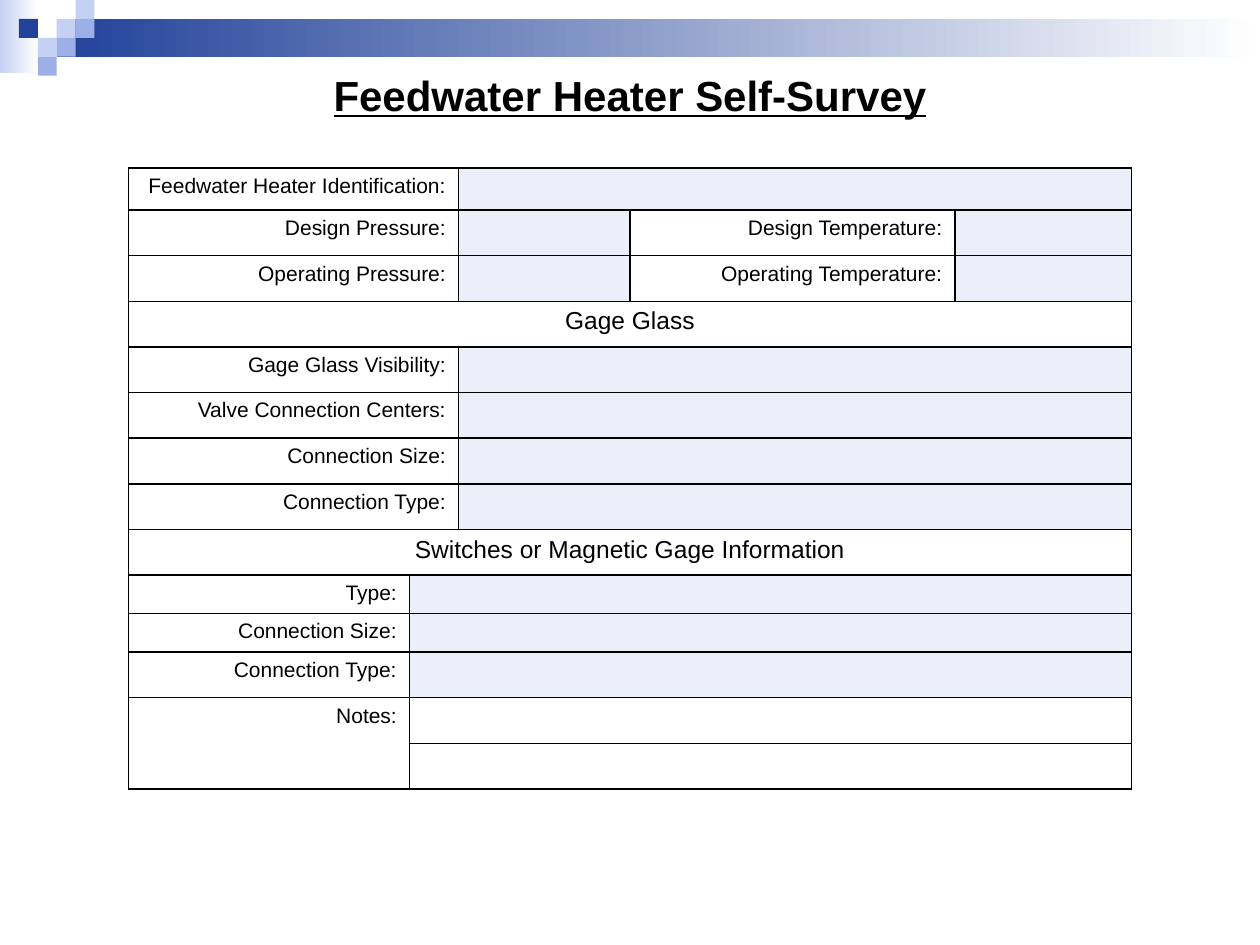
import pptx
import pptx.dml.color
import pptx.enum.shapes
import pptx.enum.text
import pptx.oxml.ns
import pptx.util
from lxml import etree

Pt = pptx.util.Pt
ALIGN = pptx.enum.text.PP_ALIGN
BLACK, WHITE, FIELD = "000000", "FFFFFF", "EBEFFA"
NAVY, BLUE, PALE = "224299", "9CB0E7", "C4D1F2"


def color(hex_string):
    return pptx.dml.color.RGBColor.from_string(hex_string)


def add_rectangle(left, top, width, height, start, end=None):
    shape = slide.shapes.add_shape(
        pptx.enum.shapes.MSO_SHAPE.RECTANGLE, Pt(left), Pt(top), Pt(width), Pt(height))
    shape.shadow.inherit = False
    shape.line.fill.background()
    if end is None:
        shape.fill.solid()
        shape.fill.fore_color.rgb = color(start)
    else:
        shape.fill.gradient()
        shape.fill.gradient_angle = 0
        for stop, hex_string in zip(shape.fill.gradient_stops, (start, end)):
            stop.color.rgb = color(hex_string)


presentation = pptx.Presentation()
presentation.slide_width = Pt(720)
presentation.slide_height = Pt(540)
slide = presentation.slides.add_slide(presentation.slide_layouts[5])

# Header band and its mosaic of squares (column, row, colour)
add_rectangle(0, 0, 22, 41.8, PALE, WHITE)
add_rectangle(32.4, 10.8, 687.6, 21.6, NAVY, WHITE)
SQUARE = 10.8
for column, row, hex_string in [(3, 1, PALE), (4, 0, PALE), (4, 1, BLUE), (2, 2, PALE),
                                (1, 1, NAVY), (3, 2, BLUE), (2, 3, BLUE)]:
    add_rectangle(column * SQUARE, row * SQUARE, SQUARE, SQUARE, hex_string)

# Title
title = slide.shapes.title
title.left, title.top, title.width, title.height = Pt(181.4), Pt(36), Pt(357.2), Pt(36)
title.text_frame.vertical_anchor = pptx.enum.text.MSO_ANCHOR.TOP
paragraph = title.text_frame.paragraphs[0]
paragraph.alignment = ALIGN.CENTER
run = paragraph.add_run()
run.text = "Feedwater Heater Self-Survey"
run.font.name, run.font.size = "Arial", Pt(24)
run.font.bold = run.font.underline = True
run.font.color.rgb = color(BLACK)

# Survey rows: each entry is (columns spanned, text, fill)
SECTION_ROWS = (3, 8)
NOTES_ROW = 12
rows = [
    [(2, "Feedwater Heater Identification:", WHITE), (3, "", FIELD)],
    [(2, "Design Pressure:", WHITE), (1, "", FIELD),
     (1, "Design Temperature:", WHITE), (1, "", FIELD)],
    [(2, "Operating Pressure:", WHITE), (1, "", FIELD),
     (1, "Operating Temperature:", WHITE), (1, "", FIELD)],
    [(5, "Gage Glass", WHITE)],
]
for label in ("Gage Glass Visibility:", "Valve Connection Centers:",
              "Connection Size:", "Connection Type:"):
    rows.append([(2, label, WHITE), (3, "", FIELD)])
rows.append([(5, "Switches or Magnetic Gage Information", WHITE)])
for label in ("Type:", "Connection Size:", "Connection Type:"):
    rows.append([(1, label, WHITE), (4, "", FIELD)])
for label in ("Notes:", ""):
    rows.append([(1, label, WHITE), (4, "", WHITE)])

# Table grid
column_widths = [160.6, 28.1, 97.9, 185.8, 100.8]
row_heights = [24] + [26.1] * 8 + [20.6] * 2 + [26.1] * 3
table = slide.shapes.add_table(
    len(rows), len(column_widths), Pt(73.4), Pt(96),
    Pt(sum(column_widths)), Pt(sum(row_heights))).table
table.first_row = table.horz_banding = False
for column, width in zip(table.columns, column_widths):
    column.width = Pt(width)
for row, height in zip(table.rows, row_heights):
    row.height = Pt(height)

# Cell contents
for row_index, entries in enumerate(rows):
    column_index = 0
    for span, text, fill in entries:
        cell = table.cell(row_index, column_index)
        if span > 1:
            cell.merge(table.cell(row_index, column_index + span - 1))
        column_index += span
        if text:
            section = row_index in SECTION_ROWS
            paragraph = cell.text_frame.paragraphs[0]
            paragraph.alignment = ALIGN.CENTER if section else ALIGN.RIGHT
            run = paragraph.add_run()
            run.text = text
            run.font.name, run.font.size = "Arial", Pt(14 if section else 12)
            run.font.color.rgb = color(BLACK)

# Cell fills, margins and borders; the two notes label cells have no line between them
for row_index, entries in enumerate(rows):
    fills = [fill for span, text, fill in entries for step in range(span)]
    for column_index, fill in enumerate(fills):
        cell = table.cell(row_index, column_index)
        if not cell.text_frame.text:
            cell.margin_top = cell.margin_bottom = 0
        properties = cell._tc.get_or_add_tcPr()
        open_side = None
        if column_index == 0:
            open_side = {NOTES_ROW: "lnB", NOTES_ROW + 1: "lnT"}.get(row_index)
        for side in ("lnL", "lnR", "lnT", "lnB"):
            line = etree.SubElement(properties, pptx.oxml.ns.qn("a:" + side), w=str(Pt(1)))
            if side == open_side:
                etree.SubElement(line, pptx.oxml.ns.qn("a:noFill"))
            else:
                solid = etree.SubElement(line, pptx.oxml.ns.qn("a:solidFill"))
                etree.SubElement(solid, pptx.oxml.ns.qn("a:srgbClr"), val=BLACK)
        cell.fill.solid()
        cell.fill.fore_color.rgb = color(fill)

presentation.save("out.pptx")
